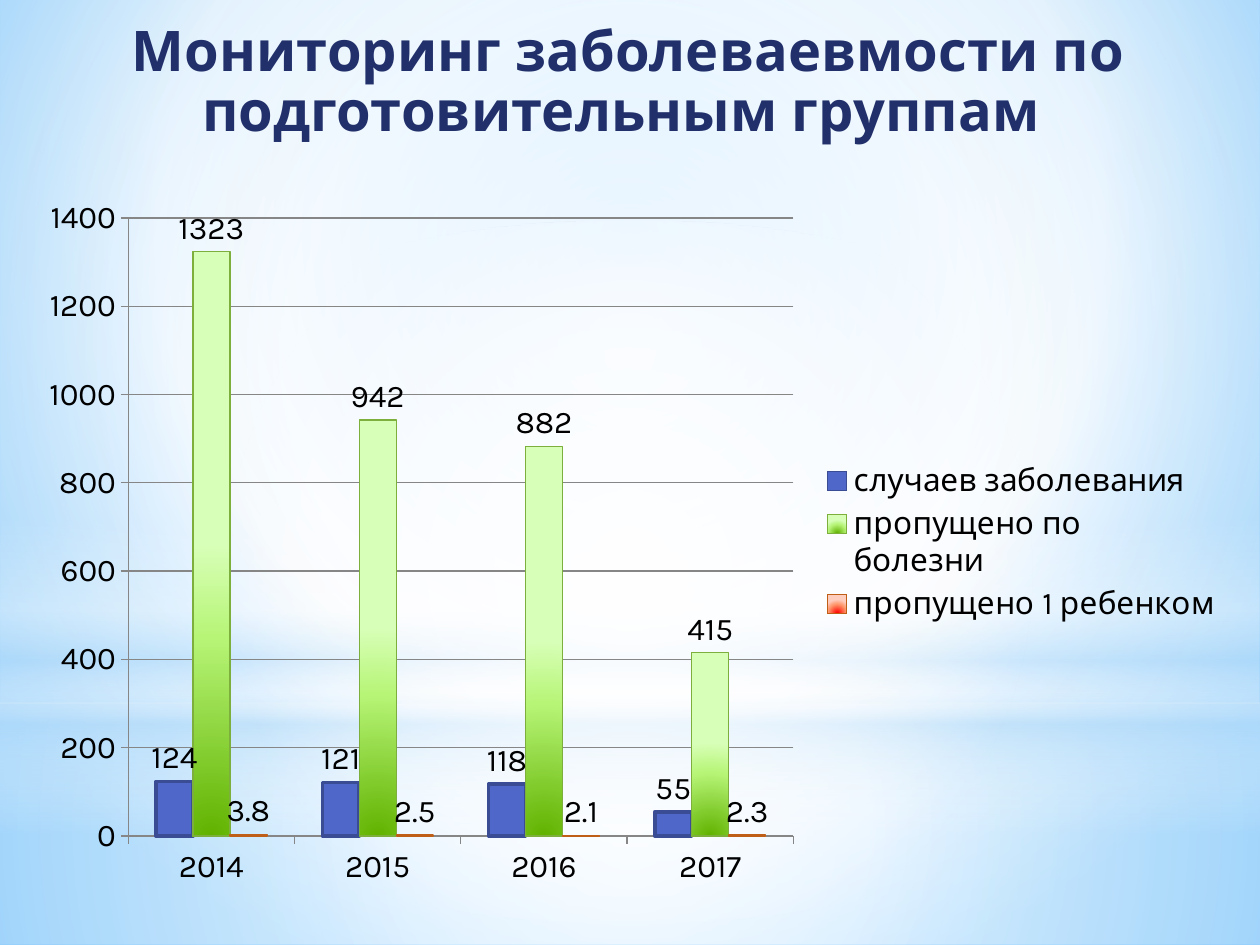
from lxml import etree
from pptx import Presentation
from pptx.chart.data import CategoryChartData
from pptx.dml.color import RGBColor
from pptx.enum.chart import XL_CHART_TYPE, XL_LABEL_POSITION, XL_LEGEND_POSITION, XL_TICK_MARK
from pptx.enum.shapes import MSO_SHAPE
from pptx.enum.text import MSO_ANCHOR, MSO_AUTO_SIZE, PP_ALIGN
from pptx.oxml.ns import qn
from pptx.util import Inches, Pt

COLUMNS = XL_CHART_TYPE.COLUMN_CLUSTERED
OUTSIDE_END = XL_LABEL_POSITION.OUTSIDE_END
LEGEND_RIGHT = XL_LEGEND_POSITION.RIGHT
TICK_OUT, TICK_NONE = XL_TICK_MARK.OUTSIDE, XL_TICK_MARK.NONE
RECT, OVAL = MSO_SHAPE.RECTANGLE, MSO_SHAPE.OVAL

FONT = "Karla"
C = {
    "white": "FFFFFF", "haze": "B4DCFA", "sky": "9ED5FF", "deep": "5BB9FF",
    "title": "21306A", "text": "000000", "axis": "868686",
    "blue": "4E67C8", "blue_line": "3A4C94",
    "green": "61B200", "green_mid": "B7F577", "green_light": "D8FFB8", "green_line": "7CAF3B",
    "red": "FF0000", "red_mid": "FF9B6F", "red_light": "FFCDBD", "red_line": "BF5E16",
}
CENTER = (50, 50, 50, 50)
BELOW = (50, 130, 50, -30)

YEARS = ["2014", "2015", "2016", "2017"]
# name, values, fill (colour or gradient stops), line colour, line width
SERIES = [
    ("случаев заболевания", (124, 121, 118, 55), "blue", "blue_line", 2),
    ("пропущено по болезни", (1323, 942, 882, 415),
     [(0, "green"), (68, "green_mid"), (100, "green_light")], "green_line", 0.75),
    ("пропущено 1 ребенком", (3.8, 2.5, 2.1, 2.3),
     [(0, "red"), (68, "red_mid"), (100, "red_light")], "red_line", 0.75),
]


def rgb(name):
    return RGBColor.from_string(C[name])


def set_gradient(fill, element, stops, focus=None, angle=90):
    """Gradient of (position, colour[, opacity]) stops: circular if focus is given, else linear."""
    fill.solid()
    solid = next(element.iter(qn("a:solidFill")))
    grad = etree.Element(qn("a:gradFill"), rotWithShape="1")
    stop_list = etree.SubElement(grad, qn("a:gsLst"))
    for position, color, *opacity in stops:
        gs = etree.SubElement(stop_list, qn("a:gs"), pos=str(position * 1000))
        clr = etree.SubElement(gs, qn("a:srgbClr"), val=C[color])
        for value in opacity:
            etree.SubElement(clr, qn("a:alpha"), val=str(value * 1000))
    if focus:
        circle = etree.SubElement(grad, qn("a:path"), path="circle")
        sides = {side: str(v * 1000) for side, v in zip("ltrb", focus)}
        etree.SubElement(circle, qn("a:fillToRect"), **sides)
    else:
        etree.SubElement(grad, qn("a:lin"), ang=str(angle * 60000), scaled="0")
    solid.getparent().replace(solid, grad)


def format_font(font, size=18, color="text", bold=False):
    font.name, font.size, font.bold = FONT, Pt(size), bold
    font.color.rgb = rgb(color)


def write_text(tf, text, align=PP_ALIGN.CENTER, spacing=1.0, **fmt):
    p = tf.paragraphs[0]
    p.alignment, p.line_spacing = align, spacing
    r = p.add_run()
    r.text = text
    format_font(r.font, **fmt)


def add_glow(slide, kind, box, stops, focus=None):
    sp = slide.shapes.add_shape(kind, *map(Inches, box))
    sp.shadow.inherit = False
    sp.line.fill.background()
    set_gradient(sp.fill, sp._element, stops, focus)


def add_backdrop(slide, width, height):
    horizon = 5.58
    set_gradient(slide.background.fill, slide._element,
                 [(0, "sky"), (60, "white"), (100, "deep")], (20, 10, 20, 60))
    # Ground and sky
    add_glow(slide, RECT, (0, horizon, width, height - horizon),
             [(0, "white", 91), (37, "white", 76), (100, "haze", 79)], CENTER)
    add_glow(slide, RECT, (0, 0, width, horizon),
             [(0, "white", 89), (48, "white", 62), (100, "haze", 79)], CENTER)
    # Band along the horizon
    add_glow(slide, RECT, (0, 4.12, width, 2.5),
             [(0, "white", 0), (29, "white", 30), (45, "haze", 40),
              (55, "white", 26), (65, "haze", 60), (100, "white", 0)])
    # Light in the middle
    add_glow(slide, OVAL, (0, 1.75, width, horizon),
             [(0, "white", 100), (56, "white", 0)], CENTER)


def add_title(slide, box, text):
    sp = slide.shapes.title
    sp.left, sp.top, sp.width, sp.height = map(Inches, box)
    tf = sp.text_frame
    tf.word_wrap, tf.auto_size = True, MSO_AUTO_SIZE.NONE
    tf.vertical_anchor = MSO_ANCHOR.TOP
    write_text(tf, text, spacing=0.9, size=32, color="title", bold=True)


def format_line(line, color, width=0.75):
    line.color.rgb = rgb(color)
    line.width = Pt(width)


def add_illness_chart(slide, box):
    data = CategoryChartData()
    data.categories = YEARS
    for name, values, *_ in SERIES:
        data.add_series(name, values)
    chart = slide.shapes.add_chart(COLUMNS, *map(Inches, box), data).chart
    format_font(chart.font)
    chart.has_title = False
    chart.has_legend = True
    chart.legend.position = LEGEND_RIGHT
    chart.legend.include_in_layout = False

    # Axes
    for axis in (chart.category_axis, chart.value_axis):
        axis.major_tick_mark, axis.minor_tick_mark = TICK_OUT, TICK_NONE
        format_line(axis.format.line, "axis")
    chart.value_axis.has_major_gridlines = True
    format_line(chart.value_axis.major_gridlines.format.line, "axis")

    # Columns and their values
    plot = chart.plots[0]
    plot.gap_width, plot.overlap, plot.vary_by_categories = 150, 0, False
    for series, (_, _, fill, line, width) in zip(plot.series, SERIES):
        series.invert_if_negative = False
        if isinstance(fill, str):
            series.format.fill.solid()
            series.format.fill.fore_color.rgb = rgb(fill)
        else:
            set_gradient(series.format.fill, series._element, fill, BELOW)
        format_line(series.format.line, line, width)
        labels = series.data_labels
        labels.show_value, labels.position = True, OUTSIDE_END


def main():
    prs = Presentation()
    prs.slide_width, prs.slide_height = Inches(10), Inches(7.5)
    slide = prs.slides.add_slide(prs.slide_layouts[5])
    add_backdrop(slide, 10, 7.5)
    add_illness_chart(slide, (0.2, 1.47, 9.61, 5.67))
    add_title(slide, (0.35, 0.13, 9.27, 1.42),
              "Мониторинг заболеваевмости по подготовительным группам ")
    # The title lies in front of the backdrop
    slide.shapes._spTree.append(slide.shapes.title._element)
    prs.save("out.pptx")


if __name__ == "__main__":
    main()
